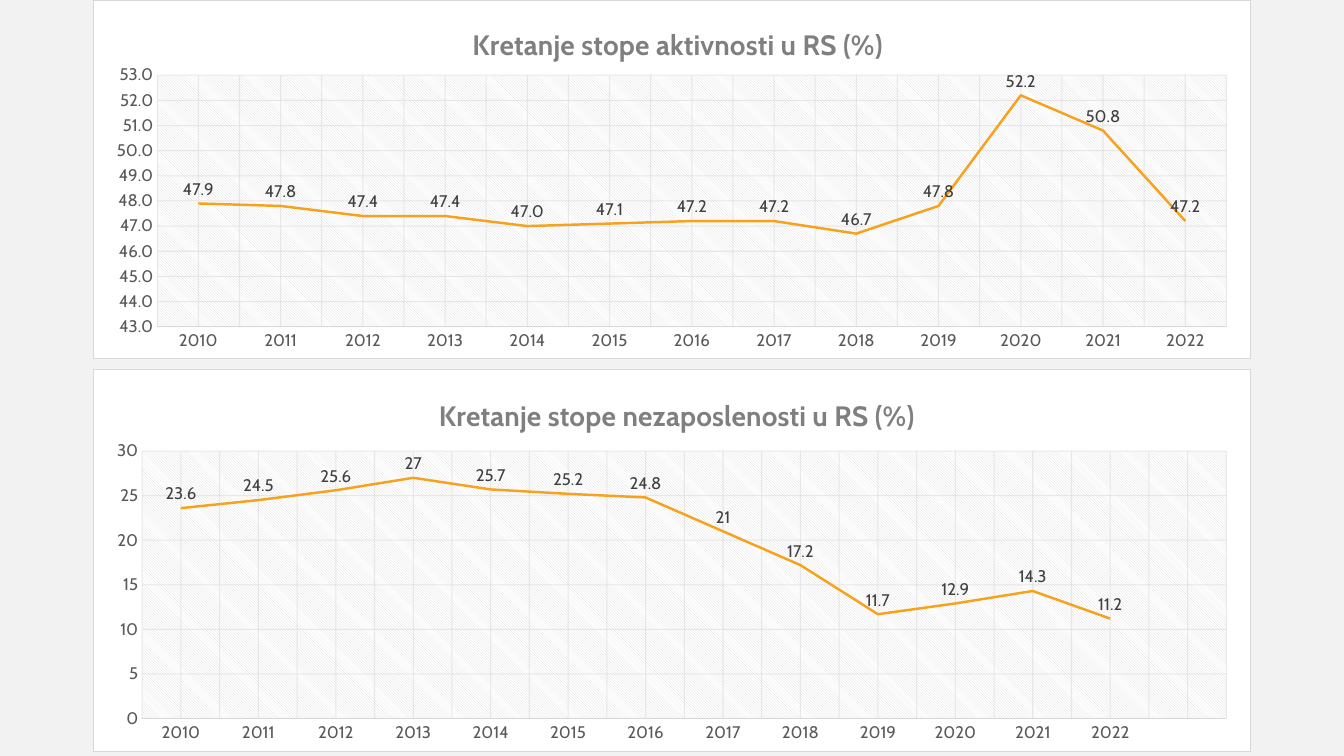
from copy import deepcopy

from lxml import etree
from pptx import Presentation
from pptx.chart.data import CategoryChartData
from pptx.dml.color import RGBColor
from pptx.enum import chart as charts
from pptx.oxml import parse_xml
from pptx.oxml.ns import nsdecls, qn
from pptx.util import Pt

COLORS = {"background": "F2F2F2", "white": "FFFFFF", "grid": "D9D9D9", "axis": "595959",
          "label": "404040", "title": "7F7F7F", "series": "F6A21D"}
YEARS = [str(year) for year in range(2010, 2023)]
# Layouts are fractions of the chart: x, y and, for the plot, width and height.
PANELS = [
    dict(title="Kretanje stope aktivnosti u RS (%)", top=0, height=256.3,
         categories=YEARS, number_format="0.0", scale=(43, 53, 1),
         values=[47.9, 47.8, 47.4, 47.4, 47, 47.1, 47.2, 47.2, 46.7, 47.8, 52.2, 50.8, 47.2],
         title_at=(0.323, 0.053), plot_at=(0.055, 0.209, 0.924, 0.703)),
    dict(title="Kretanje stope nezaposlenosti u RS (%)", top=263.5, height=273.6,
         categories=YEARS + [""], number_format="General", scale=(0, 30, 5),
         values=[23.6, 24.5, 25.6, 27, 25.7, 25.2, 24.8, 21, 17.2, 11.7, 12.9, 14.3, 11.2, None],
         title_at=(0.294, 0.057), plot_at=(0.042, 0.214, 0.937, 0.70)),
]


def format_font(font, size, color, bold=False):
    font.name = "Cabin"
    font.size = Pt(size)
    font.bold = bold
    font.color.rgb = RGBColor.from_string(COLORS[color])


def set_layout(parent, index, fractions, inner=False):
    """Give a title or plot area a manual layout, replacing an automatic one."""
    for automatic in parent.findall(qn("c:layout")):
        parent.remove(automatic)
    target = '<c:layoutTarget val="inner"/>' if inner else ""
    modes = '<c:xMode val="edge"/><c:yMode val="edge"/>'
    sizes = "".join(f'<c:{key} val="{value}"/>' for key, value in zip("xywh", fractions))
    parent.insert(index, parse_xml(
        f'<c:layout {nsdecls("c")}><c:manualLayout>{target}{modes}{sizes}'
        "</c:manualLayout></c:layout>"))


presentation = Presentation()
presentation.slide_width, presentation.slide_height = Pt(960), Pt(540)
slide = presentation.slides.add_slide(presentation.slide_layouts[6])
slide.background.fill.solid()
slide.background.fill.fore_color.rgb = RGBColor.from_string(COLORS["background"])

for panel in PANELS:
    data = CategoryChartData(number_format=panel["number_format"])
    data.categories = panel["categories"]
    data.add_series("Series 1", panel["values"])
    chart = slide.shapes.add_chart(
        charts.XL_CHART_TYPE.LINE, Pt(66.5), Pt(panel["top"]), Pt(827.3),
        Pt(panel["height"]), data).chart
    chart.has_legend = False
    format_font(chart.font, 12, "axis")

    chart.has_title = True
    title = chart.chart_title
    title.include_in_layout = False
    title.text_frame.text = panel["title"]
    format_font(title.text_frame.paragraphs[0].runs[0].font, 20, "title", bold=True)
    chart_space = chart._chartSpace
    set_layout(chart_space.find(".//" + qn("c:title")), 1, panel["title_at"])

    value_axis, category_axis = chart.value_axis, chart.category_axis
    value_axis.minimum_scale, value_axis.maximum_scale, value_axis.major_unit = panel["scale"]
    value_axis.tick_labels.number_format = panel["number_format"]
    value_axis.tick_labels.number_format_is_linked = False
    value_axis.format.line.fill.background()
    category_axis.format.line.width = Pt(0.75)
    category_axis.format.line.color.rgb = RGBColor.from_string(COLORS["grid"])
    category_axis.has_minor_gridlines = True
    for axis in (category_axis, value_axis):
        axis.major_tick_mark = axis.minor_tick_mark = charts.XL_TICK_MARK.NONE
        format_font(axis.tick_labels.font, 12, "axis")
        axis.has_major_gridlines = True
        grid_line = axis.major_gridlines.format.line
        grid_line.width = Pt(0.75)
        grid_line.color.rgb = RGBColor.from_string(COLORS["grid"])
    for grid in chart_space.iter(qn("c:majorGridlines")):
        etree.SubElement(grid.find(".//" + qn("a:srgbClr")), qn("a:alpha"), val="54000")
    minor_grid = chart_space.find(".//" + qn("c:minorGridlines"))
    minor_grid.append(deepcopy(minor_grid.getprevious().find(qn("c:spPr"))))

    plot = chart.plots[0]
    plot.vary_by_categories = False
    series = plot.series[0]
    series.smooth = False
    series.marker.style = charts.XL_MARKER_STYLE.NONE
    series.format.line.width = Pt(1.75)
    series.format.line.color.rgb = RGBColor.from_string(COLORS["series"])
    labels = series.data_labels
    labels.show_value = True
    labels.position = charts.XL_LABEL_POSITION.ABOVE
    labels.number_format = panel["number_format"]
    labels.number_format_is_linked = False
    format_font(labels.font, 12, "label")

    plot_area = chart_space.find(".//" + qn("c:plotArea"))
    set_layout(plot_area, 0, panel["plot_at"], inner=True)
    plot_area.append(parse_xml(
        f'<c:spPr {nsdecls("c", "a")}><a:pattFill prst="ltDnDiag">'
        f'<a:fgClr><a:srgbClr val="{COLORS["grid"]}"/></a:fgClr>'
        f'<a:bgClr><a:srgbClr val="{COLORS["white"]}"/></a:bgClr>'
        "</a:pattFill><a:ln><a:noFill/></a:ln></c:spPr>"))
    chart_space.find(qn("c:chart")).addnext(parse_xml(
        f'<c:spPr {nsdecls("c", "a")}>'
        f'<a:solidFill><a:srgbClr val="{COLORS["white"]}"/></a:solidFill>'
        f'<a:ln w="{Pt(0.75)}"><a:solidFill><a:srgbClr val="{COLORS["grid"]}"/></a:solidFill>'
        "</a:ln></c:spPr>"))

presentation.save("out.pptx")
